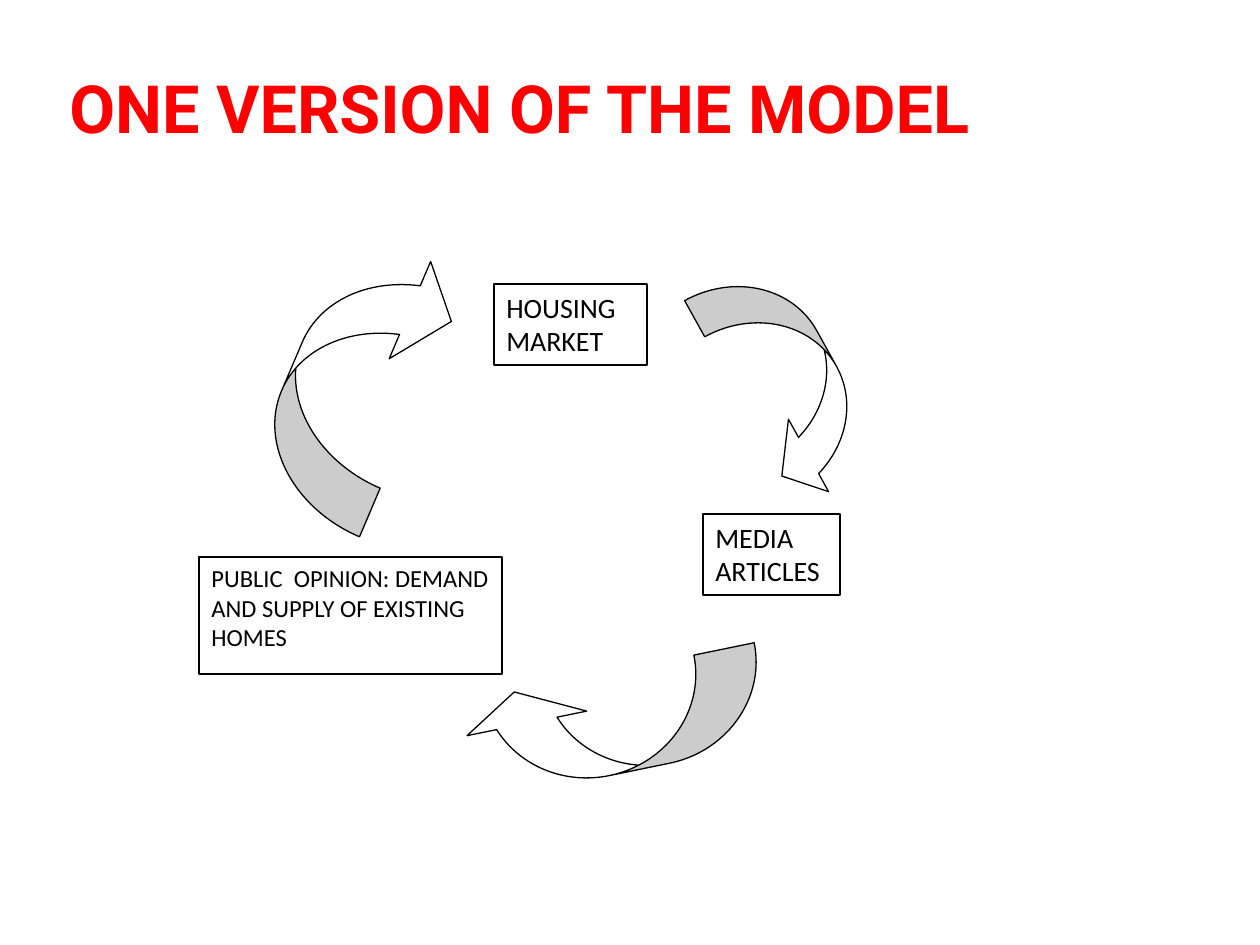
"""Build a slide showing the housing market, media and public opinion cycle."""
import pptx
import pptx.dml.color
import pptx.enum.shapes
import pptx.enum.text
import pptx.util

EMU_PER_PX = 914400 / 126
BLACK = pptx.dml.color.RGBColor(0x00, 0x00, 0x00)
WHITE = pptx.dml.color.RGBColor(0xFF, 0xFF, 0xFF)
RED = pptx.dml.color.RGBColor(0xFF, 0x00, 0x00)
SHAPES = pptx.enum.shapes.MSO_SHAPE
AUTO_SIZE = pptx.enum.text.MSO_AUTO_SIZE
ANCHOR = pptx.enum.text.MSO_ANCHOR
ALIGN = pptx.enum.text.PP_ALIGN


def px(length):
    """Turn pixels into EMU."""
    return pptx.util.Emu(round(length * EMU_PER_PX))


def set_font(paragraph, name, size, color, bold=False):
    """Set the font of a whole paragraph."""
    font = paragraph.font
    font.name = name
    font.size = pptx.util.Pt(size)
    font.bold = bold
    font.color.rgb = color


def set_title(slide, text, bounds):
    """Place and format the title placeholder."""
    title = slide.shapes.title
    title.left, title.top, title.width, title.height = map(px, bounds)
    frame = title.text_frame
    frame.text = text
    frame.word_wrap = True
    frame.auto_size = AUTO_SIZE.NONE
    frame.vertical_anchor = ANCHOR.BOTTOM
    frame.margin_left = frame.margin_right = pptx.util.Inches(0.05)
    frame.margin_top = frame.margin_bottom = 0
    paragraph = frame.paragraphs[0]
    paragraph.alignment = ALIGN.LEFT
    set_font(paragraph, "Roboto", 38, RED, bold=True)


def add_outlined(slide, kind, bounds):
    """Add a white preset shape with a thin black outline."""
    shape = slide.shapes.add_shape(kind, *map(px, bounds))
    shape.shadow.inherit = False
    shape.fill.solid()
    shape.fill.fore_color.rgb = WHITE
    shape.line.color.rgb = BLACK
    shape.line.width = pptx.util.Pt(0.75)
    return shape


def add_box(slide, text, bounds, size, auto_size):
    """Add a labelled box for one stage of the cycle."""
    box = add_outlined(slide, SHAPES.RECTANGLE, bounds)
    frame = box.text_frame
    frame.text = text
    frame.word_wrap = True
    frame.auto_size = auto_size
    frame.vertical_anchor = ANCHOR.TOP
    paragraph = frame.paragraphs[0]
    paragraph.alignment = ALIGN.LEFT
    paragraph.space_after = pptx.util.Pt(10)
    set_font(paragraph, "Calibri", size, BLACK)


def add_curved_arrow(slide, kind, bounds, rotation, adjustments):
    """Add a rotated curved arrow between two stages."""
    arrow = add_outlined(slide, kind, bounds)
    arrow.rotation = rotation
    for index, value in enumerate(adjustments):
        arrow.adjustments[index] = value


def main():
    """Build and save the presentation."""
    presentation = pptx.Presentation()
    presentation.slide_width = px(1260)
    presentation.slide_height = px(945)
    slide = presentation.slides.add_slide(presentation.slide_layouts[5])

    set_title(slide, "ONE VERSION OF THE MODEL", (63, 44, 998, 103))

    down, left = SHAPES.CURVED_DOWN_ARROW, SHAPES.CURVED_LEFT_ARROW
    for kind, bounds, rotation, adjustments in (
        (down, (213, 315, 287, 129), 293.1, (0.41, 0.82, 0.33)),
        (left, (737, 261, 101, 242), 331, (0.41, 0.82, 0.33)),
        (left, (564, 570, 101, 306), 78.4, (0.61, 1.21, 0.33)),
    ):
        add_curved_arrow(slide, kind, bounds, rotation, adjustments)

    grow, fixed = AUTO_SIZE.SHAPE_TO_FIT_TEXT, AUTO_SIZE.NONE
    for text, bounds, size, auto_size in (
        ("HOUSING MARKET", (494, 284, 153, 81), 16, grow),
        ("MEDIA  ARTICLES", (703, 514, 137, 81), 16, grow),
        ("PUBLIC  OPINION: DEMAND AND SUPPLY OF EXISTING HOMES",
         (199, 557, 303, 117), 14, fixed),
    ):
        add_box(slide, text, bounds, size, auto_size)

    presentation.save("out.pptx")


if __name__ == "__main__":
    main()
